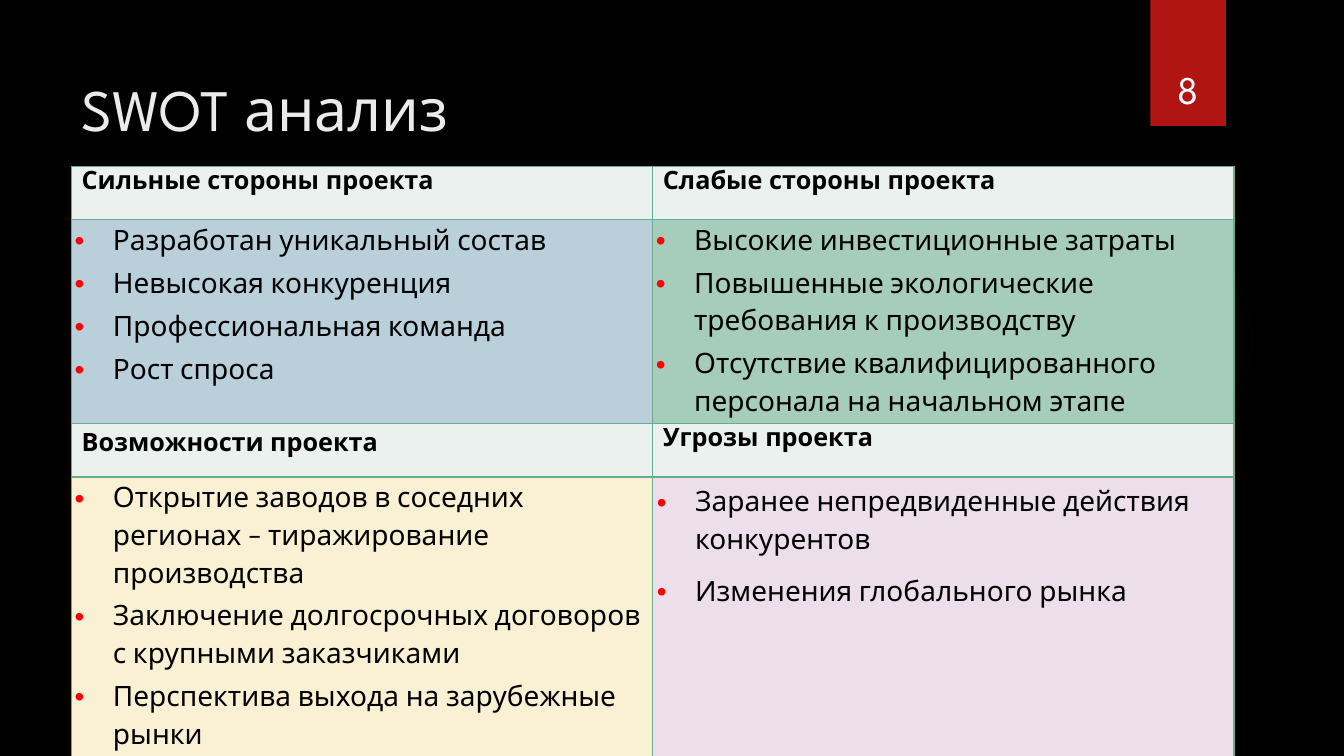
from lxml import etree
from pptx import Presentation
from pptx.dml.color import RGBColor
from pptx.enum.shapes import MSO_SHAPE
from pptx.enum.text import MSO_ANCHOR, PP_ALIGN
from pptx.oxml import parse_xml
from pptx.oxml.ns import qn
from pptx.util import Inches, Pt

OVAL, RECTANGLE = MSO_SHAPE.OVAL, MSO_SHAPE.RECTANGLE
TOP, BOTTOM = MSO_ANCHOR.TOP, MSO_ANCHOR.BOTTOM
LEFT, CENTER = PP_ALIGN.LEFT, PP_ALIGN.CENTER
DRAWING = 'xmlns:a="http://schemas.openxmlformats.org/drawingml/2006/main"'
HEADING_FONT, BODY_FONT = "League Spartan", "Karla"
COLORS = {
    "background": "000000", "glow": "50B9C1", "ribbon": "B01513",
    "title": "EBEBEB", "number": "FFFFFF", "text": "000000",
    "border": "6AAC90", "bullet": "FF0000", "heading": "EBF1EE",
    "strengths": "B9CFD9", "weaknesses": "A6CDBC",
    "opportunities": "FAF1D4", "threats": "ECDFEB",
}


def add_span(para, text, font, size, color, bold=False):
    span = para.add_run()
    span.text = text
    span.font.name = font
    span.font.size = Pt(size)
    span.font.bold = bold
    span.font.color.rgb = RGBColor.from_string(COLORS[color])


def style_cell(cell, fill):
    """Fill the cell and draw its four borders."""
    cell.fill.solid()
    cell.fill.fore_color.rgb = RGBColor.from_string(COLORS[fill])
    properties = cell._tc.get_or_add_tcPr()
    for index, side in enumerate(("lnL", "lnR", "lnT", "lnB")):
        properties.insert(index, parse_xml(
            f'<a:{side} {DRAWING} w="12700"><a:solidFill>'
            f'<a:srgbClr val="{COLORS["border"]}"/></a:solidFill></a:{side}>'))


deck = Presentation()
deck.slide_width, deck.slide_height = Inches(13.33), Inches(7.5)
page = deck.slides.add_slide(deck.slide_layouts[6])
page.background.fill.solid()
page.background.fill.fore_color.rgb = RGBColor.from_string(COLORS["background"])

# Soft glow and ribbon
glow = page.shapes.add_shape(OVAL, Inches(9.41), Inches(1.83), Inches(3.08), Inches(3.08))
glow.shadow.inherit = False
glow.line.fill.background()
stops = "".join(
    f'<a:gs pos="{place * 1000}"><a:srgbClr val="{COLORS["glow"]}">'
    f'<a:alpha val="{alpha * 1000}"/></a:srgbClr></a:gs>'
    for place, alpha in ((0, 7), (36, 6), (69, 0)))
glow._element.spPr.find(qn("a:prstGeom")).addnext(parse_xml(
    f'<a:gradFill {DRAWING}><a:gsLst>{stops}</a:gsLst><a:path path="circle">'
    '<a:fillToRect l="50000" t="50000" r="50000" b="50000"/></a:path></a:gradFill>'))

ribbon = page.shapes.add_shape(RECTANGLE, Inches(11.41), 0, Inches(0.75), Inches(1.25))
ribbon.shadow.inherit = False
ribbon.fill.solid()
ribbon.fill.fore_color.rgb = RGBColor.from_string(COLORS["ribbon"])
ribbon.line.fill.background()

# Title and page number
labels = [
    ("SWOT анализ", 0.71, 0.5, 10.29, 1.53, 42, "title", LEFT, TOP, 0.22),
    ("8", 11.32, 0.32, 0.92, 0.84, 28, "number", CENTER, BOTTOM, 0.05),
]
for text, left, top, width, height, size, color, align, anchor, inset in labels:
    box = page.shapes.add_textbox(Inches(left), Inches(top), Inches(width), Inches(height))
    frame = box.text_frame
    frame.word_wrap = True
    frame.vertical_anchor = anchor
    frame.margin_top = Inches(inset)
    para = frame.paragraphs[0]
    para.alignment = align
    add_span(para, text, HEADING_FONT, size, color)

# SWOT table: each quadrant is a heading cell above a list cell
quadrants = [
    # row, column, heading, heading font, fill, side inset, top inset, space after, items
    (0, 0, "Сильные стороны проекта", HEADING_FONT, "strengths", 0.03, 0, 3.8,
     ["Разработан уникальный состав", "Невысокая конкуренция",
      "Профессиональная команда", "Рост спроса"]),
    (0, 1, "Слабые стороны проекта", HEADING_FONT, "weaknesses", 0.03, 0, 3.8,
     ["Высокие инвестиционные затраты",
      "Повышенные экологические требования к производству",
      "Отсутствие квалифицированного персонала на начальном этапе"]),
    (2, 0, "Возможности проекта", BODY_FONT, "opportunities", 0.03, 0, 3.8,
     ["Открытие заводов в соседних регионах – тиражирование производства",
      "Заключение долгосрочных договоров с крупными заказчиками",
      "Перспектива выхода на зарубежные рынки"]),
    (2, 1, "Угрозы проекта", HEADING_FONT, "threats", 0.04, 0.04, 10,
     ["Заранее непредвиденные действия конкурентов", "Изменения глобального рынка"]),
]
row_heights = [0.53, 1.97, 0.53, 2.5]
table = page.shapes.add_table(4, 2, Inches(0.71), Inches(1.65),
                              Inches(11.53), Inches(sum(row_heights))).table
table.first_row = table.horz_banding = False
for row, height in zip(table.rows, row_heights):
    row.height = Inches(height)

for row, column, heading, font, fill, side, top, after, items in quadrants:
    heading_cell = table.cell(row, column)
    style_cell(heading_cell, "heading")
    add_span(heading_cell.text_frame.paragraphs[0], heading, font, 18, "text", True)

    list_cell = table.cell(row + 1, column)
    style_cell(list_cell, fill)
    list_cell.margin_left = list_cell.margin_right = Inches(side)
    list_cell.margin_top = list_cell.margin_bottom = Inches(top)
    frame = list_cell.text_frame
    for index, item in enumerate(items):
        para = frame.add_paragraph() if index else frame.paragraphs[0]
        properties = para._p.get_or_add_pPr()
        properties.set("marL", str(Inches(0.38)))
        properties.set("indent", str(-Inches(0.38)))
        color = etree.SubElement(properties, qn("a:buClr"))
        etree.SubElement(color, qn("a:srgbClr"), val=COLORS["bullet"])
        etree.SubElement(properties, qn("a:buFont"), typeface="Arial")
        etree.SubElement(properties, qn("a:buChar"), char="•")
        para.line_spacing = 1.15
        para.space_after = Pt(after)
        add_span(para, item, BODY_FONT, 20, "text")

deck.save("out.pptx")
